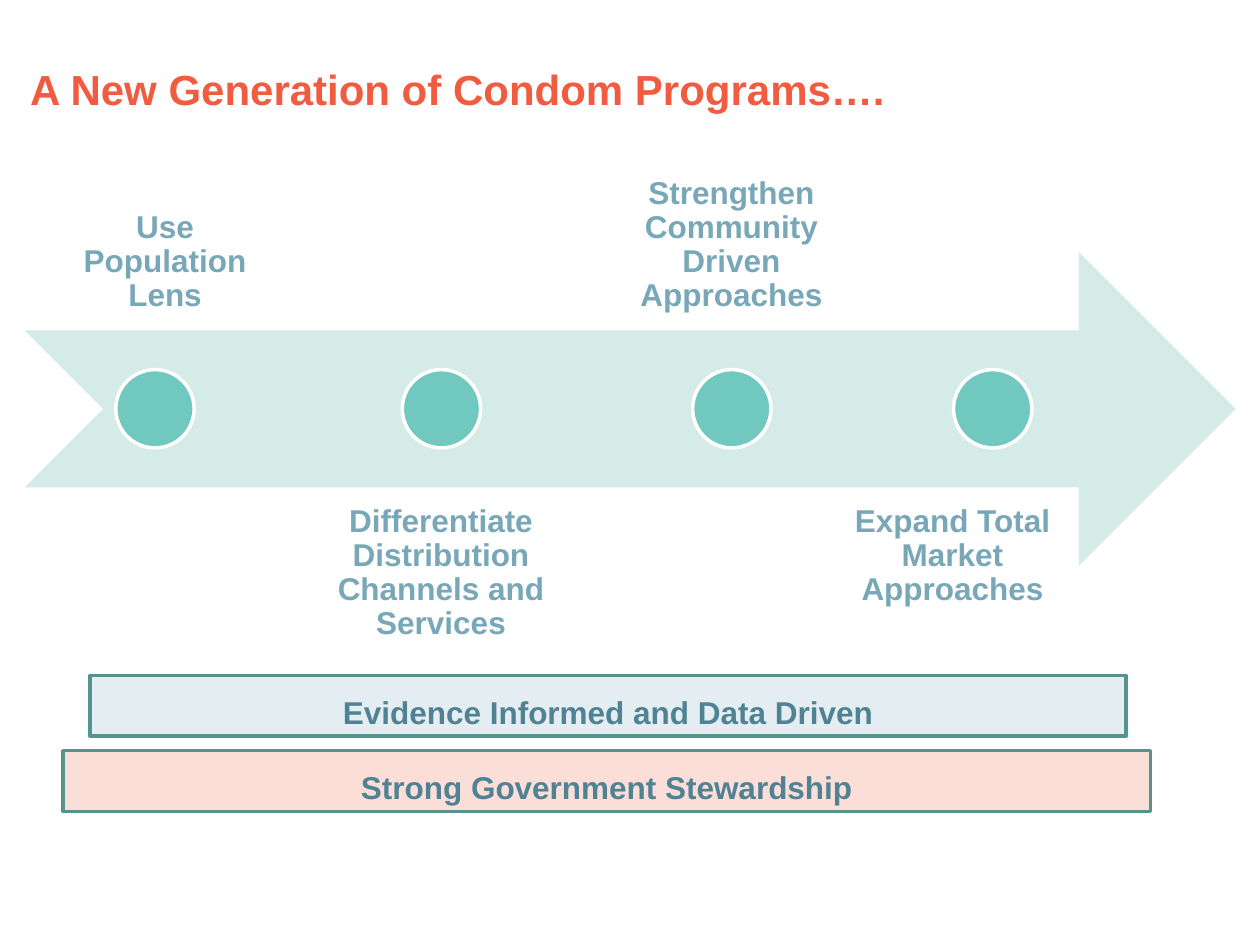
"""Build a slide with a four-step arrow timeline above two foundation bars."""
import pptx
import pptx.dml.color
import pptx.enum.shapes
import pptx.enum.text
import pptx.util

Pt = pptx.util.Pt
SHAPE = pptx.enum.shapes.MSO_SHAPE
ANCHOR = pptx.enum.text.MSO_ANCHOR
ALIGN = pptx.enum.text.PP_ALIGN


def add_shape(kind, left, top, width, height, fill, line=None):
    shape = slide.shapes.add_shape(kind, Pt(left), Pt(top), Pt(width), Pt(height))
    shape.shadow.inherit = False
    shape.fill.solid()
    shape.fill.fore_color.rgb = pptx.dml.color.RGBColor.from_string(fill)
    if line:
        shape.line.color.rgb = pptx.dml.color.RGBColor.from_string(line)
        shape.line.width = Pt(2)
    else:
        shape.line.fill.background()
    return shape


def write_text(shape, text, size, color, anchor, align, insets):
    frame = shape.text_frame
    frame.word_wrap = True
    frame.auto_size = pptx.enum.text.MSO_AUTO_SIZE.NONE
    frame.vertical_anchor = anchor
    frame.margin_left, frame.margin_top, frame.margin_right, frame.margin_bottom = map(Pt, insets)
    frame.text = text
    paragraph = frame.paragraphs[0]
    paragraph.alignment = align
    paragraph.font.name = "Arial"
    paragraph.font.size = Pt(size)
    paragraph.font.bold = True
    paragraph.font.color.rgb = pptx.dml.color.RGBColor.from_string(color)
    return paragraph


deck = pptx.Presentation()
deck.slide_width, deck.slide_height = Pt(720), Pt(540)
slide = deck.slides.add_slide(deck.slide_layouts[5])

title = slide.shapes.title
title.left, title.top, title.width, title.height = Pt(10), Pt(32.5), Pt(565), Pt(36)
write_text(title, "A New Generation of Condom Programs….", 24, "F15B40",
           ANCHOR.TOP, ALIGN.LEFT, (7.2, 3.6, 7.2, 3.6))

add_shape(SHAPE.NOTCHED_RIGHT_ARROW, 14.2, 144, 692, 179.3, "D5EBE8")

steps = [
    ("Use Population Lens", 20.2, 148.3, 66.2),
    ("Differentiate Distribution Channels and Services", 166.3, 171.4, 229.9),
    ("Strengthen Community Driven Approaches", 342, 151.9, 395.8),
    ("Expand Total Market Approaches", 475.2, 138.2, 544.9),
]
for index, (text, left, width, dot_left) in enumerate(steps):
    top, anchor = [(10, ANCHOR.BOTTOM), (278.8, ANCHOR.TOP)][index % 2]
    label = slide.shapes.add_textbox(Pt(left), Pt(top), Pt(width), Pt(179.3))
    paragraph = write_text(label, text, 18, "78A7B7", anchor, ALIGN.CENTER, (10, 10, 10, 10))
    paragraph.line_spacing = 0.9
    add_shape(SHAPE.OVAL, dot_left, 211.2, 44.8, 44.8, "70C8BE", "FFFFFF")

bars = [
    ("Evidence Informed and Data Driven", 51.5, 386, 592, "E4EDF1"),
    ("Strong Government Stewardship", 36, 429, 621.5, "FCDED9"),
]
for text, left, top, width, fill in bars:
    bar = add_shape(SHAPE.RECTANGLE, left, top, width, 34.7, fill, "53948D")
    write_text(bar, text, 18, "4F8394", ANCHOR.MIDDLE, ALIGN.CENTER, (7.2, 7.2, 7.2, 0))

deck.save("out.pptx")
